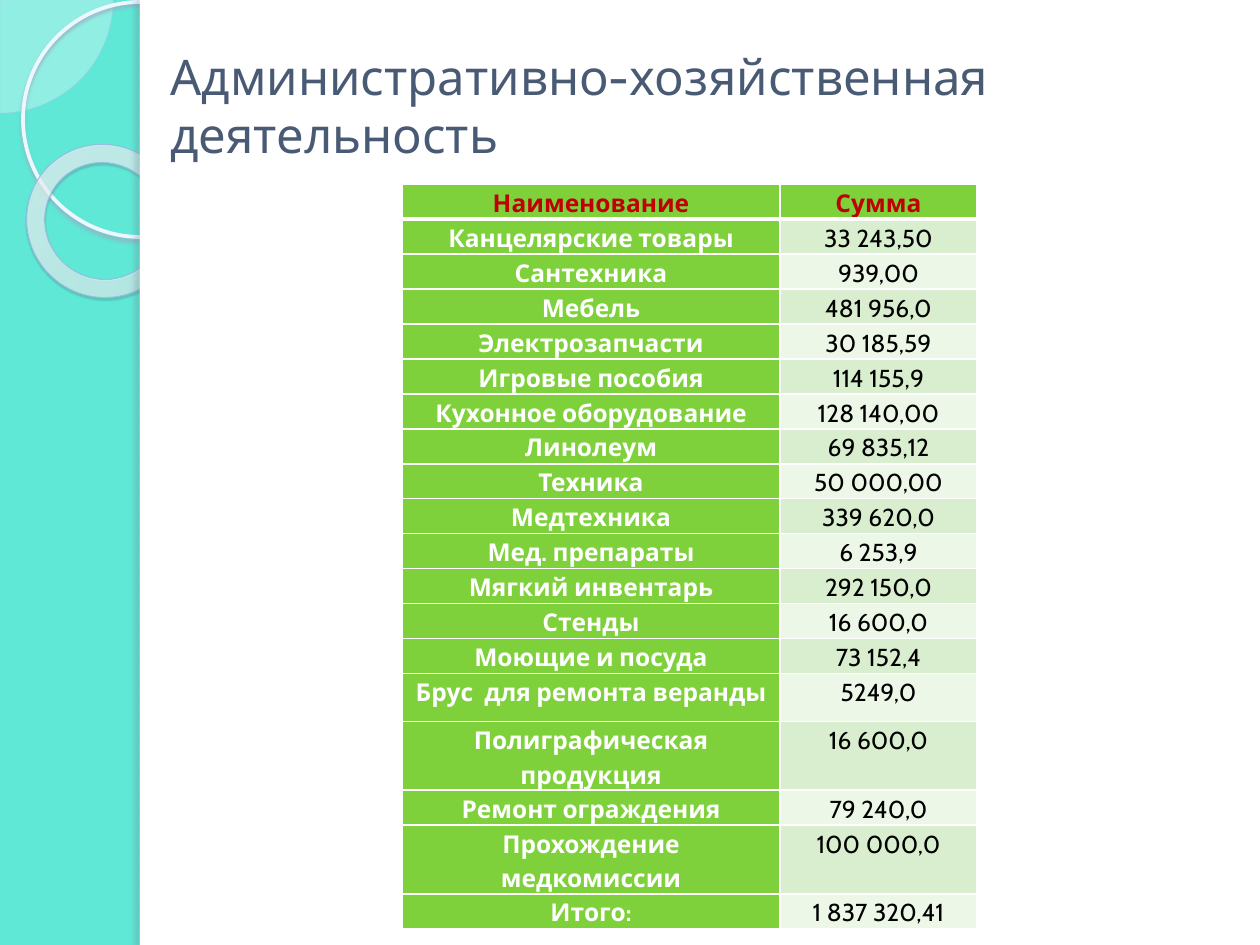
from lxml import etree
from pptx import Presentation
from pptx import util as u
from pptx.dml.color import RGBColor
from pptx.enum import shapes, text
from pptx.oxml import ns

SCALE = 914400 / 126
FONT = "Cabin"
GREEN, WHITE = "7FD13B", "FFFFFF"
BANDS = ("D8EECE", "ECF7E8")
HEADINGS = ("Наименование", "Сумма")
EXPENSES = [
    ("Канцелярские товары", "33 243,50"),
    ("Сантехника", "939,00"),
    ("Мебель", "481 956,0"),
    ("Электрозапчасти", "30 185,59"),
    ("Игровые пособия", "114 155,9"),
    ("Кухонное оборудование", "128 140,00"),
    ("Линолеум", "69 835,12"),
    ("Техника", "50 000,00"),
    ("Медтехника", "339 620,0"),
    ("Мед. препараты", "6 253,9"),
    ("Мягкий инвентарь", "292 150,0"),
    ("Стенды", "16 600,0"),
    ("Моющие и посуда", "73 152,4"),
    ("Брус  для ремонта веранды", "5249,0"),
    ("Полиграфическая продукция", "16 600,0"),
    ("Ремонт ограждения", "79 240,0"),
    ("Прохождение медкомиссии", "100 000,0"),
    ("Итого:", "1 837 320,41"),
]
TALL_ROWS = {14: 48, 15: 49}


def px(length):
    return u.Emu(round(length * SCALE))


def rgb(value):
    return RGBColor.from_string(value)


def apply(target, values):
    for name, value in values.items():
        setattr(target, name, value)


def child(parent, tag, **attributes):
    return etree.SubElement(parent, ns.qn(tag), {k: str(v) for k, v in attributes.items()})


def add_color(parent, color, alpha=100):
    value = child(parent, "a:srgbClr", val=color)
    if alpha < 100:
        child(value, "a:alpha", val=alpha * 1000)


def decorate(slide, kind, box, fill=None, alpha=100, line=None, shadow=None):
    shape = slide.shapes.add_shape(kind, *map(px, box))
    shape.shadow.inherit = False
    properties = shape._element.spPr
    if fill:
        shape.fill.solid()
        shape.fill.fore_color.rgb = rgb(fill)
        if alpha < 100:
            color = properties.find(ns.qn("a:solidFill"))[0]
            child(color, "a:alpha", val=alpha * 1000)
    else:
        shape.fill.background()
    if line:
        shape.line.color.rgb = rgb(line[0])
        shape.line.width = u.Pt(line[1])
    else:
        shape.line.fill.background()
    if shadow:
        color, opacity, blur, distance, angle = shadow
        outer = child(properties.find(ns.qn("a:effectLst")), "a:outerShdw",
                      blurRad=u.Pt(blur), dist=u.Pt(distance),
                      dir=angle * 60000, algn="tl", rotWithShape=0)
        add_color(outer, color, opacity)
    return shape


def radial_fill(shape, stops, focus):
    properties = shape._element.spPr
    old = properties.find(ns.qn("a:noFill"))
    gradient = etree.Element(ns.qn("a:gradFill"), rotWithShape="1")
    stop_list = child(gradient, "a:gsLst")
    for position, color, alpha in stops:
        add_color(child(stop_list, "a:gs", pos=position * 1000), color, alpha)
    circle = child(gradient, "a:path", path="circle")
    child(circle, "a:fillToRect", **{side: value * 1000 for side, value in zip("ltrb", focus)})
    properties.replace(old, gradient)


def add_side_band(slide, left, top, width, height):
    corner = decorate(slide, shapes.MSO_SHAPE.PIE, (left - 113, top - 113, 226, 226),
                      "F8FCFF", 33, ("A6CBEC", 0.25))
    corner.adjustments[0] = 0
    corner.adjustments[1] = 54
    decorate(slide, shapes.MSO_SHAPE.OVAL, (left + 23, top + 2, 235, 235),
             line=("EEF7FF", 2.15), shadow=("97AFC4", 85, 2, 2, 90))
    ring = decorate(slide, shapes.MSO_SHAPE.DONUT, (left + 26, top + 145, 155, 152),
                    line=("98BEE0", 0.58), shadow=("475765", 35, 1, 1.2, 75))
    ring.adjustments[0] = 0.12
    ring.rotation = 38.6
    radial_fill(ring, [(0, "F9FCFF", 70), (70, "FDFEFF", 55), (100, "9FD2FF", 60)],
                (-408, -50, 508, 150))
    edge = left + width
    decorate(slide, shapes.MSO_SHAPE.RECTANGLE, (edge, top, 1260 - edge, height), WHITE)
    decorate(slide, shapes.MSO_SHAPE.RECTANGLE, (edge, top, 10, height), WHITE,
             shadow=("697580", 25, 3, 3, 180))


def add_title(slide, left, top, width, height):
    title = slide.shapes.title
    slide.shapes._spTree.append(title._element)
    apply(title, dict(left=px(left), top=px(top), width=px(width), height=px(height)))
    frame = title.text_frame
    frame.text = "Административно-хозяйственная деятельность"
    apply(frame, dict(word_wrap=True, vertical_anchor=text.MSO_ANCHOR.MIDDLE))
    paragraph = frame.paragraphs[0]
    paragraph.alignment = text.PP_ALIGN.LEFT
    apply(paragraph.font, dict(size=u.Pt(28), name=FONT, bold=False))
    paragraph.font.color.rgb = rgb("495A74")


def add_borders(cell, bottom):
    properties = cell._tc.get_or_add_tcPr()
    for index, (side, points) in enumerate(zip("LRTB", (1, 1, 1, bottom))):
        border = etree.Element(ns.qn(f"a:ln{side}"), w=str(u.Pt(points)))
        add_color(child(border, "a:solidFill"), WHITE)
        properties.insert(index, border)


def fill_cell(cell, wording, fill, color, bold, bottom):
    cell.text = wording
    apply(cell, dict(margin_left=px(9), margin_right=px(9), margin_top=0, margin_bottom=0))
    cell.fill.solid()
    cell.fill.fore_color.rgb = rgb(fill)
    add_borders(cell, bottom)
    paragraph = cell.text_frame.paragraphs[0]
    apply(paragraph, dict(alignment=text.PP_ALIGN.CENTER, line_spacing=1.15))
    apply(paragraph.font, dict(size=u.Pt(14), name=FONT, bold=bold))
    paragraph.font.color.rgb = rgb(color)


def add_expenses(slide, left, top, widths, row_height):
    rows = [HEADINGS, *EXPENSES]
    heights = [TALL_ROWS.get(index, row_height) for index in range(len(rows))]
    expenses = slide.shapes.add_table(len(rows), len(widths), px(left), px(top),
                                      px(sum(widths)), px(sum(heights))).table
    for column, width in zip(expenses.columns, widths):
        column.width = px(width)
    for index, (name, amount) in enumerate(rows):
        expenses.rows[index].height = px(heights[index])
        heading = index == 0
        bottom = 3 if heading else 1
        band = GREEN if heading else BANDS[(index - 1) % 2]
        fill_cell(expenses.cell(index, 0), name, GREEN,
                  "C00000" if heading else WHITE, True, bottom)
        fill_cell(expenses.cell(index, 1), amount, band,
                  "C00000" if heading else "000000", heading, bottom)


def main():
    deck = Presentation()
    apply(deck, dict(slide_width=px(1260), slide_height=px(945)))
    slide = deck.slides.add_slide(deck.slide_layouts[5])
    slide.background.fill.solid()
    slide.background.fill.fore_color.rgb = rgb("5FE8D6")
    add_side_band(slide, 0, 0, 140, 945)
    add_title(slide, 158, 26, 1102, 158)
    add_expenses(slide, 402, 184, (378, 197), 35)
    deck.save("out.pptx")


if __name__ == "__main__":
    main()
